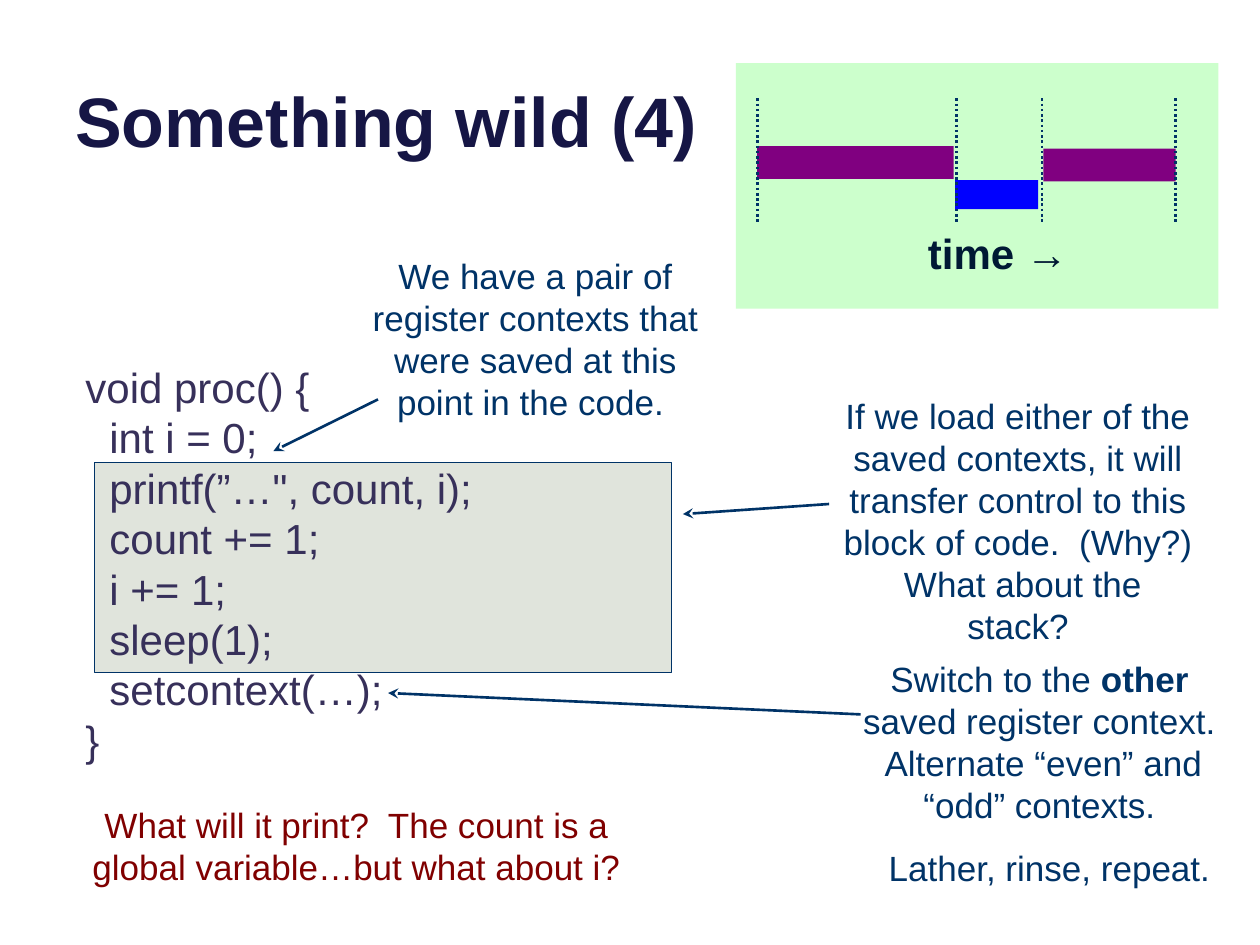
"""Build the "Something wild (4)" slide on saved register contexts."""
from lxml import etree
from pptx import Presentation
from pptx.dml.color import RGBColor
from pptx.enum.dml import MSO_LINE
from pptx.enum.shapes import MSO_CONNECTOR, MSO_SHAPE
from pptx.enum.text import MSO_ANCHOR, PP_ALIGN
from pptx.oxml.ns import qn
from pptx.util import Inches, Pt

LEFT, CENTER = PP_ALIGN.LEFT, PP_ALIGN.CENTER
TOP, BOTTOM = MSO_ANCHOR.TOP, MSO_ANCHOR.BOTTOM
RECTANGLE, STRAIGHT = MSO_SHAPE.RECTANGLE, MSO_CONNECTOR.STRAIGHT
DOTTED = MSO_LINE.ROUND_DOT
COLORS = {
    "title": "161645", "code": "37305A", "navy": "003367", "dark": "001934",
    "red": "800000", "block": "E0E4DC", "mint": "CCFFCC",
    "purple": "800080", "blue": "0000FF",
}

prs = Presentation()
prs.slide_width, prs.slide_height = Inches(10), Inches(7.5)
slide = prs.slides.add_slide(prs.slide_layouts[6])
shapes = slide.shapes


def add_text(paragraphs, box, size=20, color="navy", bold=False,
             align=CENTER, anchor=TOP, bold_word=None, indent=0):
    frame = shapes.add_textbox(*map(Inches, box)).text_frame
    frame.word_wrap = True
    frame.vertical_anchor = anchor
    for number, line in enumerate(paragraphs):
        paragraph = frame.paragraphs[0] if number == 0 else frame.add_paragraph()
        paragraph.alignment = align
        if indent and 0 < number < len(paragraphs) - 1:
            paragraph._p.get_or_add_pPr().set("marL", str(Inches(indent)))
        before, word, after = line.partition(bold_word) if bold_word else (line, "", "")
        for text, strong in ((before, bold), (word, True), (after, bold)):
            if text:
                run = paragraph.add_run()
                run.text = text
                run.font.name, run.font.size, run.font.bold = "Arial", Pt(size), strong
                run.font.color.rgb = RGBColor.from_string(COLORS[color])


def add_line(start, end, dash=None, arrow=False):
    line = shapes.add_connector(STRAIGHT, *map(Inches, (*start, *end)))
    line.line.width = Pt(1.5)
    line.line.color.rgb = RGBColor.from_string(COLORS["navy"])
    if dash:
        line.line.dash_style = dash
    properties = line._element.spPr
    if arrow:
        etree.SubElement(properties.find(qn("a:ln")), qn("a:headEnd"), type="stealth")
    etree.SubElement(properties, qn("a:effectLst"))


for box, fill, outline in (
    ((0.75, 3.67, 4.58, 1.67), "block", "navy"),
    ((5.84, 0.5, 3.83, 1.95), "mint", None),
    ((6.01, 1.16, 1.56, 0.26), "purple", None),
    ((7.58, 1.43, 0.66, 0.23), "blue", None),
    ((8.28, 1.18, 1.05, 0.26), "purple", None),
):
    bar = shapes.add_shape(RECTANGLE, *map(Inches, box))
    bar.shadow.inherit = False
    bar.fill.solid()
    bar.fill.fore_color.rgb = RGBColor.from_string(COLORS[fill])
    if outline:
        bar.line.color.rgb = RGBColor.from_string(COLORS[outline])
        bar.line.width = Pt(0.75)
    else:
        bar.line.fill.background()

for switch_time in (6.01, 7.59, 8.27, 9.33):
    add_line((switch_time, 0.78), (switch_time, 1.76), dash=DOTTED)
add_text(["time →"], (5.67, 1.76, 4.5, 0.5), size=24, color="dark", bold=True)

add_text(["Something wild (4)"], (0.5, -0.37, 9, 1.7), size=40, color="title",
         bold=True, align=LEFT, anchor=BOTTOM)
add_text(["void proc() {", "int i = 0;", "printf(”…\", count, i);", "count += 1;",
          "i += 1;", "sleep(1);", "setcontext(…);", "}"],
         (0.58, 2.82, 5.83, 3.6), size=24, color="code", align=LEFT, indent=0.19)

add_text(["We have a pair of register contexts that were saved at this point in the code. "],
         (2.75, 1.97, 3, 1.45))
add_text(["If we load either of the saved contexts, it will transfer control to this "
          "block of code.  (Why?)  What about the stack?"], (6.58, 3.08, 3, 1.78))
add_text(["Switch to the other saved register context.  Alternate “even” and “odd” contexts."],
         (6.75, 5.17, 3, 1.45), bold_word="other")
add_text(["Lather, rinse, repeat."], (6.83, 6.67, 3, 0.44))
add_text(["What will it print?  The count is a global variable…but what about i?"],
         (0.58, 6.33, 4.5, 0.77), color="red")

for target, note in (((2.17, 3.58), (3, 3.17)), ((5.42, 4.08), (6.58, 4)),
                     ((3.08, 5.5), (6.83, 5.67))):
    add_line(target, note, arrow=True)

prs.save("out.pptx")
